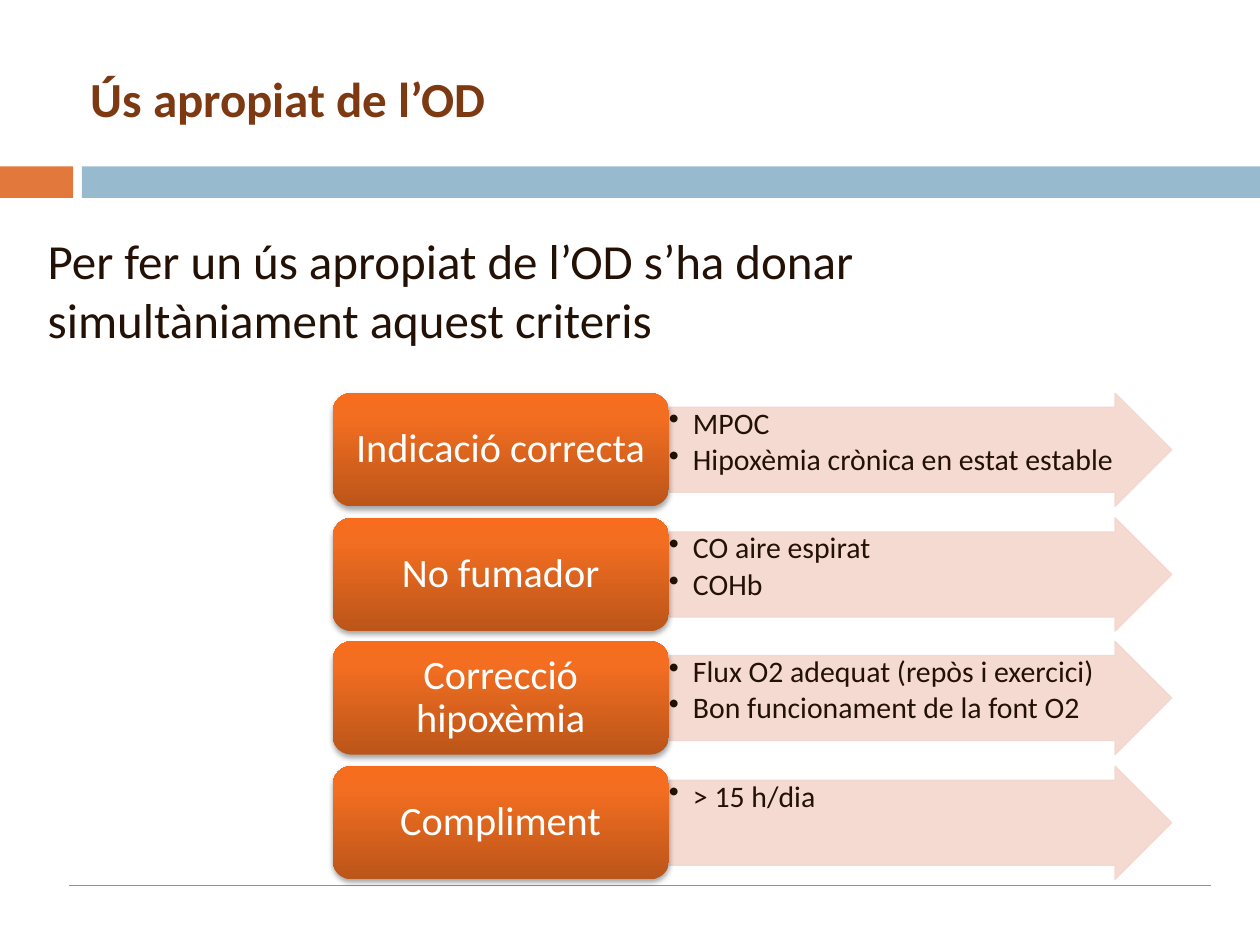
import copy

import pptx
import pptx.dml.color
import pptx.enum.shapes
import pptx.enum.text
import pptx.oxml
import pptx.oxml.ns
import pptx.util

Inches, Pt = pptx.util.Inches, pptx.util.Pt
RGBColor = pptx.dml.color.RGBColor
MSO_SHAPE = pptx.enum.shapes.MSO_SHAPE
MSO_ANCHOR = pptx.enum.text.MSO_ANCHOR
PP_ALIGN = pptx.enum.text.PP_ALIGN
qn = pptx.oxml.ns.qn

TITLE = "Ús apropiat de l’OD"
INTRODUCTION = "Per fer un ús apropiat de l’OD s’ha donar simultàniament aquest criteris"
CRITERIA = [
    ("Indicació correcta", ["MPOC", "Hipoxèmia crònica en estat estable"]),
    ("No fumador", ["CO aire espirat", "COHb"]),
    ("Correcció hipoxèmia", ["Flux O2 adequat (repòs i exercici)", "Bon funcionament de la font O2"]),
    ("Compliment", ["> 15 h/dia"]),
]

FONT = "Calibri"
ORANGE = RGBColor(0xE2, 0x78, 0x3B)
BLUE = RGBColor(0x97, 0xBA, 0xCF)
BROWN = RGBColor(0x7C, 0x39, 0x12)
DARK = RGBColor(0x23, 0x11, 0x06)
WHITE = RGBColor(0xFF, 0xFF, 0xFF)
PINK = RGBColor(0xF4, 0xD6, 0xCE)
BOX_GRADIENT = [
    (0, RGBColor(0xBB, 0x55, 0x19)),
    (0.8, RGBColor(0xF3, 0x6E, 0x21)),
    (1, RGBColor(0xF8, 0x6D, 0x1D)),
]

ROW_TOP, ROW_PITCH, ROW_HEIGHT = 3.12, 0.987, 0.9
BOX_LEFT, BOX_WIDTH = 2.64, 2.67
ARROW_LEFT, ARROW_WIDTH = 5.3, 4
NAMESPACE = 'xmlns:a="http://schemas.openxmlformats.org/drawingml/2006/main"'


def add_text(paragraph, text, size, color, bold=False):
    run = paragraph.add_run()
    run.text = text
    run.font.name = FONT
    run.font.size = Pt(size)
    run.font.bold = bold
    run.font.color.rgb = color


def add_text_box(slide, place, text, size, color, anchor, bold=False):
    frame = slide.shapes.add_textbox(*map(Inches, place)).text_frame
    frame.word_wrap = True
    frame.vertical_anchor = anchor
    add_text(frame.paragraphs[0], text, size, color, bold)


def add_plain_shape(slide, kind, place, color=None):
    shape = slide.shapes.add_shape(kind, *map(Inches, place))
    shape.shadow.inherit = False
    shape.line.fill.background()
    if color is not None:
        shape.fill.solid()
        shape.fill.fore_color.rgb = color
    return shape


def add_bullet(paragraph):
    properties = paragraph._p.get_or_add_pPr()
    properties.set("marL", str(Inches(0.19)))
    properties.set("indent", str(-Inches(0.19)))
    properties.append(pptx.oxml.parse_xml(f'<a:buChar {NAMESPACE} char="•"/>'))


def add_arrow(slide, top, details):
    place = (ARROW_LEFT, top, ARROW_WIDTH, ROW_HEIGHT)
    arrow = add_plain_shape(slide, MSO_SHAPE.RIGHT_ARROW, place, PINK)
    arrow.adjustments[0], arrow.adjustments[1] = 0.75, 0.5
    arrow.line.color.rgb = PINK
    arrow.line.width = Pt(0.75)
    for color in arrow._element.spPr.iter(qn("a:srgbClr")):
        color.append(pptx.oxml.parse_xml(f'<a:alpha {NAMESPACE} val="90000"/>'))

    frame = arrow.text_frame
    frame.word_wrap = True
    frame.vertical_anchor = MSO_ANCHOR.TOP
    frame.margin_left = frame.margin_right = Inches(0.01)
    frame.margin_top = frame.margin_bottom = Inches(0.01)
    for index, detail in enumerate(details):
        paragraph = frame.add_paragraph() if index else frame.paragraphs[0]
        paragraph.alignment = PP_ALIGN.LEFT
        paragraph.line_spacing = 0.9
        paragraph.space_after = Pt(2.5)
        add_bullet(paragraph)
        add_text(paragraph, detail, 17, DARK)


def add_criterion_box(slide, top, label):
    place = (BOX_LEFT, top, BOX_WIDTH, ROW_HEIGHT)
    box = add_plain_shape(slide, MSO_SHAPE.ROUNDED_RECTANGLE, place)
    box.fill.gradient()
    box.fill.gradient_angle = 90
    properties = box._element.spPr
    stop_list = next(properties.iter(qn("a:gsLst")))
    stop_list.append(copy.deepcopy(stop_list[-1]))
    for stop, (position, color) in zip(box.fill.gradient_stops, BOX_GRADIENT):
        stop.position = position
        stop.color.rgb = color
    properties.find(qn("a:effectLst")).append(pptx.oxml.parse_xml(
        f'<a:outerShdw {NAMESPACE} blurRad="{Pt(3.1)}" dist="{Pt(1.8)}" dir="5400000" '
        'rotWithShape="0"><a:srgbClr val="000000"><a:alpha val="35000"/></a:srgbClr></a:outerShdw>'
    ))

    frame = box.text_frame
    frame.word_wrap = True
    frame.vertical_anchor = MSO_ANCHOR.MIDDLE
    paragraph = frame.paragraphs[0]
    paragraph.alignment = PP_ALIGN.CENTER
    paragraph.line_spacing = 0.9
    add_text(paragraph, label, 23, WHITE)


def add_bottom_rule(slide):
    rule = slide.shapes.add_connector(
        pptx.enum.shapes.MSO_CONNECTOR.STRAIGHT,
        Inches(0.55), Inches(7.03), Inches(9.61), Inches(7.03),
    )
    rule.line.color.rgb = ORANGE
    rule.line.width = Pt(0.75)
    rule._element.spPr.append(pptx.oxml.parse_xml(f"<a:effectLst {NAMESPACE}/>"))


def main():
    presentation = pptx.Presentation()
    presentation.slide_width, presentation.slide_height = Inches(10), Inches(7.5)
    slide = presentation.slides.add_slide(presentation.slide_layouts[6])

    add_plain_shape(slide, MSO_SHAPE.RECTANGLE, (0, 1.32, 0.58, 0.25), ORANGE)
    add_plain_shape(slide, MSO_SHAPE.RECTANGLE, (0.65, 1.32, 9.35, 0.25), BLUE)
    add_bottom_rule(slide)
    add_text_box(slide, (0.62, 0.31, 8.88, 0.94), TITLE, 28, BROWN, MSO_ANCHOR.MIDDLE, bold=True)
    add_text_box(slide, (0.28, 1.78, 7.32, 1.04), INTRODUCTION, 28, DARK, MSO_ANCHOR.TOP)

    for row, (label, details) in enumerate(CRITERIA):
        top = round(ROW_TOP + row * ROW_PITCH, 2)
        add_arrow(slide, top, details)
        add_criterion_box(slide, top, label)

    presentation.save("out.pptx")


if __name__ == "__main__":
    main()
